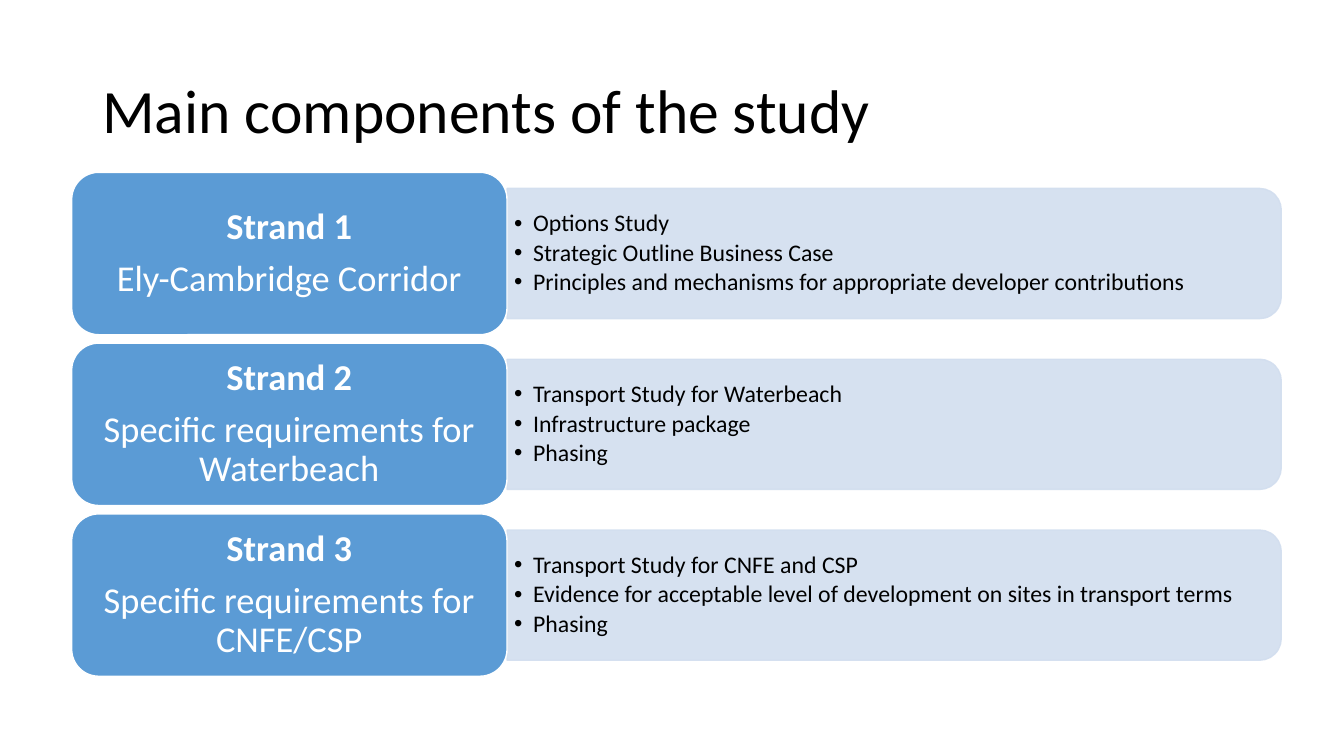
from lxml import etree
from pptx import Presentation
from pptx.dml.color import RGBColor
from pptx.enum.shapes import MSO_SHAPE
from pptx.enum.text import MSO_ANCHOR, PP_ALIGN
from pptx.oxml.ns import qn
from pptx.util import Pt

ROUNDED = MSO_SHAPE.ROUNDED_RECTANGLE
ROUNDED_TOP = MSO_SHAPE.ROUND_2_SAME_RECTANGLE
MIDDLE = MSO_ANCHOR.MIDDLE
LEFT, CENTER = PP_ALIGN.LEFT, PP_ALIGN.CENTER

BLACK = RGBColor(0x00, 0x00, 0x00)
WHITE = RGBColor(0xFF, 0xFF, 0xFF)
BLUE = RGBColor(0x5B, 0x9B, 0xD5)
PALE_BLUE = RGBColor(0xD2, 0xDE, 0xEF)

STRANDS = [
    ("Strand 1", "Ely-Cambridge Corridor", [
        "Options Study",
        "Strategic Outline Business Case",
        "Principles and mechanisms for appropriate developer contributions",
    ]),
    ("Strand 2", "Specific requirements for Waterbeach", [
        "Transport Study for Waterbeach",
        "Infrastructure package",
        "Phasing",
    ]),
    ("Strand 3", "Specific requirements for CNFE/CSP", [
        "Transport Study for CNFE and CSP",
        "Evidence for acceptable level of development on sites in transport terms",
        "Phasing",
    ]),
]

CARD_LEFT, CARD_TOP = 51.2, 123.1
CARD_WIDTH, CARD_HEIGHT = 311, 116
STRAND_PITCH = 122
PANEL_WIDTH, PANEL_HEIGHT = 553, 93
LIST_WIDTH, LIST_HEIGHT = 548.5, 84
BULLET_INDENT = 13.5


class StrandSlide:
    font_name = "Calibri"
    line_spacing = 0.9

    def __init__(self, deck):
        self.page = deck.slides.add_slide(deck.slide_layouts[6])

    def shape(self, kind, left, top, width, height, fill, line, opacity=100):
        shape = self.page.shapes.add_shape(
            kind, Pt(left), Pt(top), Pt(width), Pt(height))
        shape.shadow.inherit = False
        shape.fill.solid()
        shape.fill.fore_color.rgb = fill
        shape.line.color.rgb = line
        shape.line.width = Pt(1)
        if opacity < 100:
            for color in shape._element.spPr.iter(qn("a:srgbClr")):
                etree.SubElement(color, qn("a:alpha"), val=str(opacity * 1000))
        return shape

    def text_box(self, left, top, width, height):
        return self.page.shapes.add_textbox(
            Pt(left), Pt(top), Pt(width), Pt(height))

    def fill_text(self, box, lines, size, color, inset, align=LEFT, after=0,
                  bold_first=False, bullets=False):
        frame = box.text_frame
        side, edge = map(Pt, inset)
        frame_format = {
            "word_wrap": True, "vertical_anchor": MIDDLE,
            "margin_left": side, "margin_right": side,
            "margin_top": edge, "margin_bottom": edge,
        }
        for name, value in frame_format.items():
            setattr(frame, name, value)
        for index, line in enumerate(lines):
            para = frame.add_paragraph() if index else frame.paragraphs[0]
            para_format = {
                "alignment": align, "line_spacing": self.line_spacing,
                "space_before": Pt(0), "space_after": Pt(after),
            }
            for name, value in para_format.items():
                setattr(para, name, value)
            span = para.add_run()
            span.text = line
            font_format = {
                "name": self.font_name, "size": Pt(size),
                "bold": bold_first and index == 0,
            }
            for name, value in font_format.items():
                setattr(span.font, name, value)
            span.font.color.rgb = color
            if bullets:
                self.bullet(para)

    def bullet(self, para):
        properties = para._p.get_or_add_pPr()
        properties.set("marL", str(Pt(BULLET_INDENT)))
        properties.set("indent", str(-Pt(BULLET_INDENT)))
        etree.SubElement(properties, qn("a:buFont"), typeface="Arial")
        etree.SubElement(properties, qn("a:buChar"), char="•")

    def title(self, text):
        box = self.text_box(66, 28.75, 828, 104.4)
        self.fill_text(box, [text], 44, BLACK, (7.2, 3.6))

    def strand(self, top, name, subject, topics):
        middle = top + CARD_HEIGHT / 2
        panel_left = CARD_LEFT + CARD_WIDTH
        panel = self.shape(
            ROUNDED_TOP, panel_left + (PANEL_WIDTH - PANEL_HEIGHT) / 2,
            middle - PANEL_WIDTH / 2, PANEL_HEIGHT, PANEL_WIDTH,
            PALE_BLUE, PALE_BLUE, opacity=90)
        panel.rotation = 90
        topic_box = self.text_box(
            panel_left, middle - LIST_HEIGHT / 2, LIST_WIDTH, LIST_HEIGHT)
        self.fill_text(topic_box, topics, 17, BLACK, (5.1, 2.55),
                       after=2.55, bullets=True)
        card = self.shape(
            ROUNDED, CARD_LEFT, top, CARD_WIDTH, CARD_HEIGHT, BLUE, WHITE)
        self.fill_text(card, [name, subject], 26, WHITE, (7.8, 3.9),
                       align=CENTER, after=9.1, bold_first=True)


def main():
    deck = Presentation()
    deck.slide_width, deck.slide_height = Pt(960), Pt(540)
    slide = StrandSlide(deck)
    slide.title("Main components of the study")
    for index, (name, subject, topics) in enumerate(STRANDS):
        slide.strand(CARD_TOP + index * STRAND_PITCH, name, subject, topics)
    deck.save("out.pptx")


if __name__ == "__main__":
    main()
